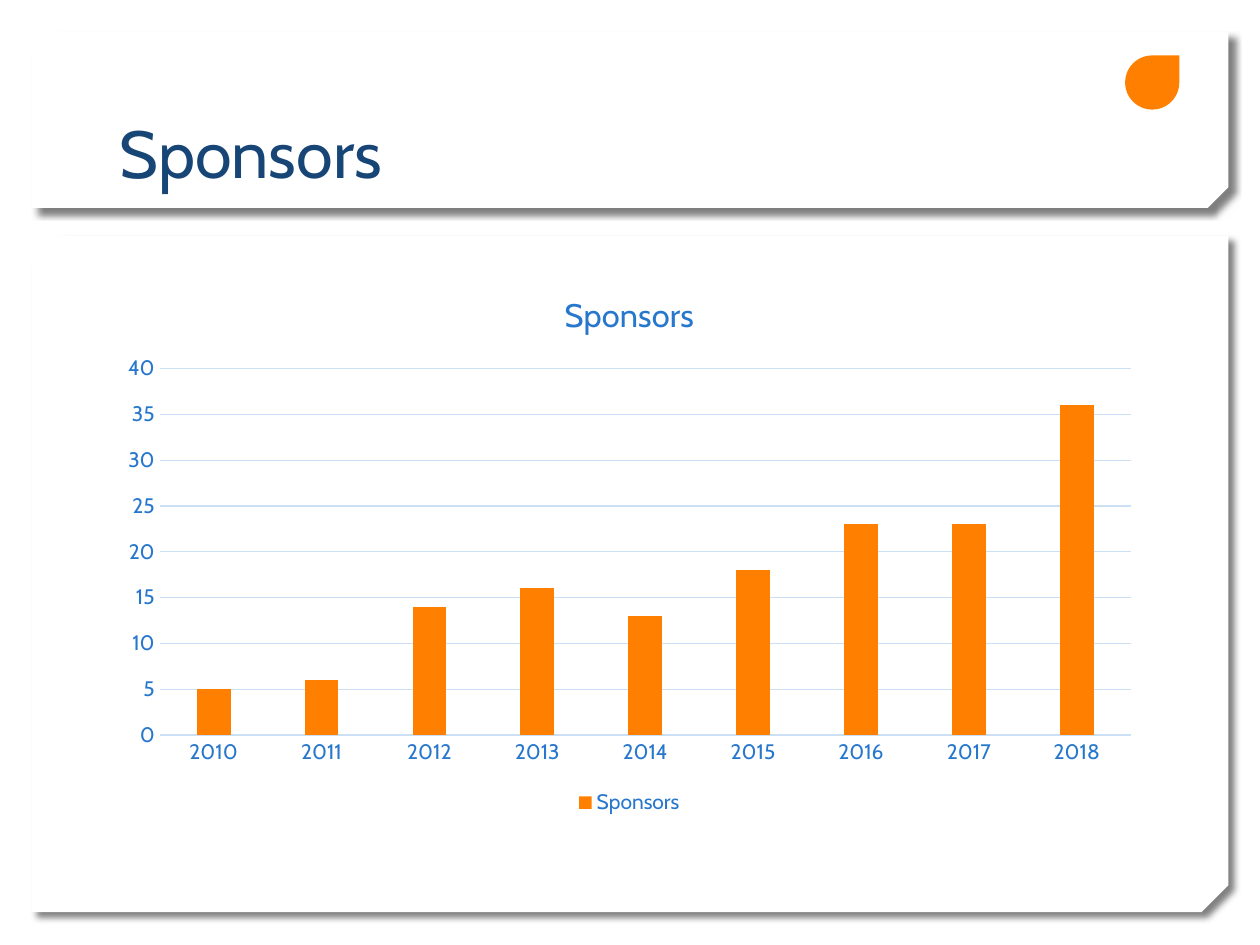
"""Build the Sponsors slide: two clipped panels, a title and a column chart."""
from lxml.etree import SubElement
from pptx import Presentation
from pptx.chart.data import CategoryChartData
from pptx.dml.color import RGBColor
from pptx.enum.chart import XL_CHART_TYPE as ChartType, XL_LEGEND_POSITION as LegendPos, XL_TICK_MARK as Tick
from pptx.enum.shapes import MSO_SHAPE as Shape
from pptx.enum.text import MSO_ANCHOR as Anchor, PP_ALIGN as Align
from pptx.oxml.ns import qn
from pptx.util import Inches, Pt

TOPIC = "Sponsors"
SPONSORS = {"2010": 5, "2011": 6, "2012": 14, "2013": 16, "2014": 13,
            "2015": 18, "2016": 23, "2017": 23, "2018": 36}
PANELS = [((0.25, 1.87, 9.5, 5.37), 0.04), ((0.25, 0.25, 9.5, 1.4), 0.117)]
DROP_BOX = (8.93, 0.44, 0.43, 0.43)
TITLE_BOX = (0.85, 0.32, 8.29, 1.25)
CHART_BOX = (0.85, 2.13, 8.29, 4.38)
FONT = "Cabin"
WHITE, ORANGE, NAVY, BLUE, PALE = "FFFFFF", "FF7F01", "174576", "2777CD", "CBE0F5"


def color(hex_code):
    return RGBColor.from_string(hex_code)


def inches(box):
    return [Inches(length) for length in box]


def style_font(font, size, hex_code):
    font.name, font.size, font.bold = FONT, Pt(size), False
    font.color.rgb = color(hex_code)


def write(frame, text, size=12, hex_code=BLUE, align=None):
    paragraph = frame.paragraphs[0]
    paragraph.alignment = align
    run = paragraph.add_run()
    run.text = text
    style_font(run.font, size, hex_code)


def add_plain(slide, kind, box, hex_code):
    shape = slide.shapes.add_shape(kind, *inches(box))
    shape.shadow.inherit = False
    shape.fill.solid()
    shape.fill.fore_color.rgb = color(hex_code)
    shape.line.fill.background()
    return shape


def add_panel(slide, box, snip):
    panel = add_plain(slide, Shape.SNIP_2_DIAG_RECTANGLE, box, WHITE)
    panel.adjustments[0], panel.adjustments[1] = 0, snip
    properties = panel.element.spPr
    properties.find(qn("a:xfrm")).set("flipV", "1")
    shadow = SubElement(properties.find(qn("a:effectLst")), qn("a:outerShdw"),
                        blurRad=str(Pt(4)), dist=str(Pt(5)), dir=str(45 * 60000),
                        algn="tl", rotWithShape="0")
    shade = SubElement(shadow, qn("a:srgbClr"), val="000000")
    SubElement(shade, qn("a:alpha"), val="50000")


def style_line(line):
    line.color.rgb = color(PALE)
    line.width = Pt(0.75)


def add_sponsor_chart(slide):
    data = CategoryChartData()
    data.categories = list(SPONSORS)
    data.add_series(TOPIC, list(SPONSORS.values()))
    chart = slide.shapes.add_chart(ChartType.COLUMN_CLUSTERED, *inches(CHART_BOX), data).chart
    style_font(chart.font, 10, "103154")
    chart.has_title = True
    write(chart.chart_title.text_frame, TOPIC, size=18.6)
    chart.chart_title.include_in_layout = False
    chart.has_legend = True
    chart.legend.position = LegendPos.BOTTOM
    chart.legend.include_in_layout = False
    years, counts = chart.category_axis, chart.value_axis
    for part in (years.tick_labels, counts.tick_labels, chart.legend):
        style_font(part.font, 12, BLUE)
    for axis in (years, counts):
        axis.major_tick_mark = axis.minor_tick_mark = Tick.NONE
    style_line(years.format.line)
    counts.format.line.fill.background()
    style_line(counts.major_gridlines.format.line)
    counts.minimum_scale, counts.maximum_scale, counts.major_unit = 0, 40, 5
    plot = chart.plots[0]
    plot.gap_width, plot.overlap, plot.vary_by_categories = 219, -27, False
    columns = plot.series[0].format.fill
    columns.solid()
    columns.fore_color.rgb = color(ORANGE)


def main():
    deck = Presentation()
    deck.slide_width, deck.slide_height = Inches(10), Inches(7.5)
    slide = deck.slides.add_slide(deck.slide_layouts[5])
    for box, snip in PANELS:
        add_panel(slide, box, snip)
    add_plain(slide, Shape.TEAR, DROP_BOX, ORANGE)
    title = slide.shapes.title
    title.left, title.top, title.width, title.height = inches(TITLE_BOX)
    title.text_frame.vertical_anchor = Anchor.BOTTOM
    write(title.text_frame, TOPIC, size=38, hex_code=NAVY, align=Align.LEFT)
    slide.shapes.element.append(title.element)
    add_sponsor_chart(slide)
    deck.save("out.pptx")


if __name__ == "__main__":
    main()
